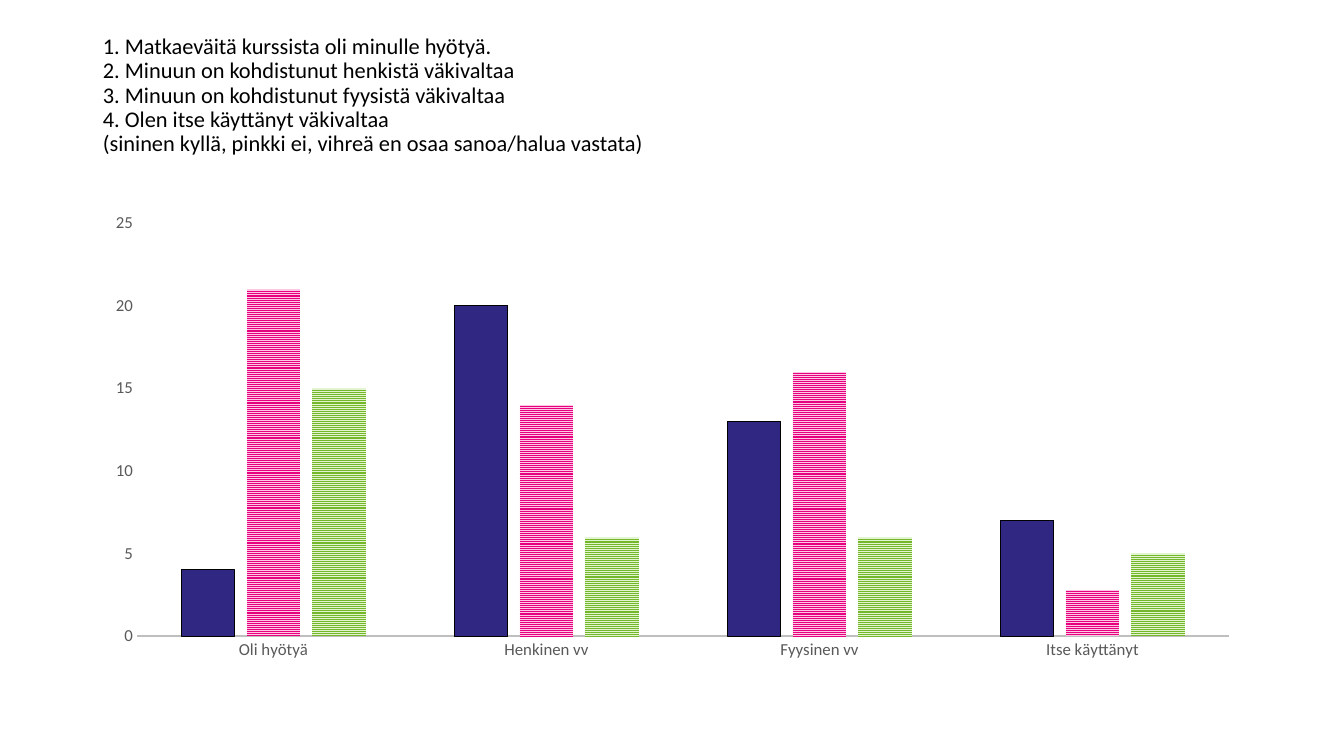
"""Builds a slide with survey statements above a clustered column chart."""
import pptx
import pptx.chart.data
import pptx.dml.color
import pptx.enum.chart
import pptx.enum.dml
import pptx.enum.text
import pptx.util
from dataclasses import dataclass

Inches = pptx.util.Inches

STATEMENTS = [
    "1. Matkaeväitä kurssista oli minulle hyötyä.",
    "2. Minuun on kohdistunut henkistä väkivaltaa",
    "3. Minuun on kohdistunut fyysistä väkivaltaa",
    "4. Olen itse käyttänyt väkivaltaa",
    "(sininen kyllä, pinkki ei, vihreä en osaa sanoa/halua vastata)",
]
CATEGORIES = ["Oli hyötyä", "Henkinen vv", "Fyysinen vv", "Itse käyttänyt"]
ANSWERS = {
    "Series 1": (4, 20, 13, 7),
    "Series 2": (21, 14, 16, 2.8),
    "Series 3": (15, 6, 6, 5),
}


@dataclass(frozen=True)
class Theme:
    font: str = "Calibri"
    text: str = "000000"
    axis_text: str = "595959"
    axis_line: str = "BFBFBF"
    yes: str = "302783"
    stripes: tuple = (("E6007E", "FFC7E6"), ("74B72B", "E3F4D1"))
    title_size: int = 16
    axis_size: int = 12


THEME = Theme()
LEFT, WIDTH = Inches(0.92), Inches(11.5)
TITLE_BOX = (LEFT, Inches(0.34), WIDTH, Inches(1.26))
CHART_BOX = (LEFT, Inches(2.02), WIDTH, Inches(4.62))


def rgb(color):
    return pptx.dml.color.RGBColor.from_string(color)


def style_font(font, size, color):
    font.name = THEME.font
    font.size = pptx.util.Pt(size)
    font.color.rgb = rgb(color)


def add_title(slide):
    title = slide.shapes.title
    title.left, title.top, title.width, title.height = TITLE_BOX
    frame = title.text_frame
    frame.auto_size = pptx.enum.text.MSO_AUTO_SIZE.NONE
    frame.vertical_anchor = pptx.enum.text.MSO_ANCHOR.BOTTOM
    paragraph = frame.paragraphs[0]
    paragraph.text = "\v".join(STATEMENTS)
    paragraph.alignment = pptx.enum.text.PP_ALIGN.LEFT
    paragraph.line_spacing = 0.9
    style_font(paragraph.font, THEME.title_size, THEME.text)


def style_axes(chart):
    for axis in (chart.category_axis, chart.value_axis):
        axis.major_tick_mark = pptx.enum.chart.XL_TICK_MARK.NONE
        axis.minor_tick_mark = pptx.enum.chart.XL_TICK_MARK.NONE
        axis.has_major_gridlines = False
        style_font(axis.tick_labels.font, THEME.axis_size, THEME.axis_text)
    line = chart.category_axis.format.line
    line.color.rgb = rgb(THEME.axis_line)
    line.width = pptx.util.Pt(1.5)
    values = chart.value_axis
    values.format.line.fill.background()
    values.minimum_scale, values.maximum_scale, values.major_unit = 0, 25, 5


def style_series(plot):
    yes, *striped = plot.series
    yes.format.fill.solid()
    yes.format.fill.fore_color.rgb = rgb(THEME.yes)
    yes.format.line.color.rgb = rgb(THEME.text)
    yes.format.line.width = pptx.util.Pt(0.75)
    for series, (front, back) in zip(striped, THEME.stripes):
        fill = series.format.fill
        fill.patterned()
        fill.pattern = pptx.enum.dml.MSO_PATTERN.NARROW_HORIZONTAL
        fill.fore_color.rgb = rgb(front)
        fill.back_color.rgb = rgb(back)
        series.format.line.fill.background()


def add_chart(slide):
    data = pptx.chart.data.CategoryChartData()
    data.categories = CATEGORIES
    for name, values in ANSWERS.items():
        data.add_series(name, values)
    kind = pptx.enum.chart.XL_CHART_TYPE.COLUMN_CLUSTERED
    chart = slide.shapes.add_chart(kind, *CHART_BOX, data).chart
    chart.has_legend = False
    chart.has_title = False
    style_font(chart.font, 10, THEME.text)
    plot = chart.plots[0]
    plot.vary_by_categories = False
    plot.gap_width, plot.overlap = 164, -22
    style_axes(chart)
    style_series(plot)


def main():
    presentation = pptx.Presentation()
    presentation.slide_width = Inches(13.33)
    presentation.slide_height = Inches(7.5)
    slide = presentation.slides.add_slide(presentation.slide_layouts[5])
    add_title(slide)
    add_chart(slide)
    presentation.save("out.pptx")


if __name__ == "__main__":
    main()
